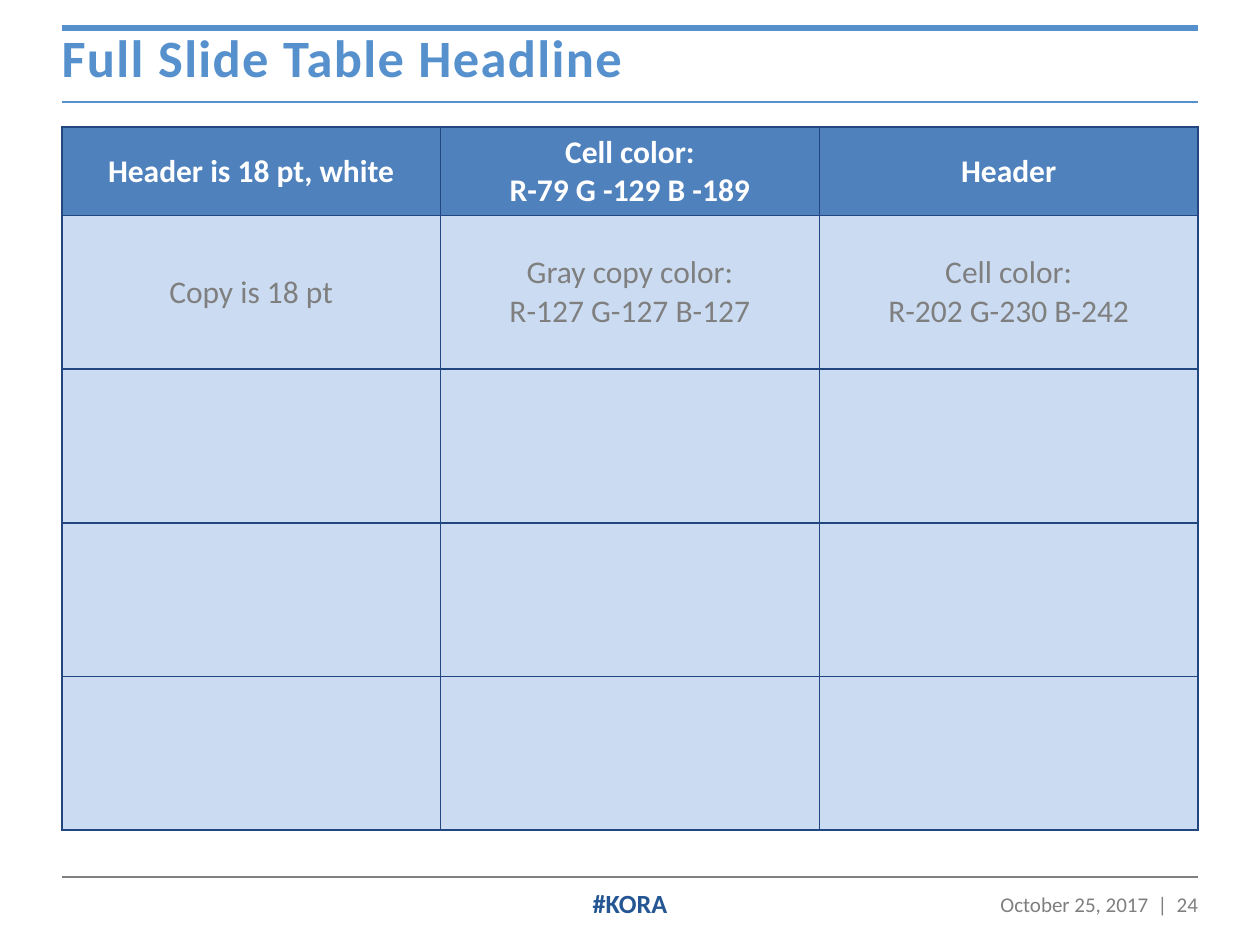
from dataclasses import dataclass

from lxml.etree import SubElement
from pptx import Presentation
from pptx.dml.color import RGBColor
from pptx.enum.shapes import MSO_CONNECTOR
from pptx.enum.text import MSO_ANCHOR, PP_ALIGN
from pptx.oxml import parse_xml
from pptx.oxml.ns import nsdecls, qn
from pptx.util import Pt


@dataclass(frozen=True)
class Theme:
    """Colours, type sizes and font of the slide."""
    font: str = "Calibri"
    accent: str = "5691CE"
    header_fill: str = "4F81BD"
    body_fill: str = "CBDCF2"
    border: str = "22467F"
    rule: str = "808080"
    copy: str = "7F7F7F"
    hashtag: str = "255694"
    white: str = "FFFFFF"
    title_size: float = 30
    table_size: float = 18
    hashtag_size: float = 15
    date_size: float = 12


THEME = Theme()
LEFT, WIDTH, INSET = 35.3, 649.4, 7.2
HEADER_HEIGHT = 49.7
ROWS = [
    ["Header is 18 pt, white", "Cell color:\nR-79 G -129 B -189", "Header"],
    ["Copy is 18 pt", "Gray copy color:\nR-127 G-127 B-127",
     "Cell color:\nR-202 G-230 B-242"],
    *[[""] * 3 for _ in range(3)],
]


def apply(target, formats):
    """Set each attribute of the target from a dict of format values."""
    for attribute, value in formats.items():
        setattr(target, attribute, value)


def write(frame, wording, size, color, bold=False, align=PP_ALIGN.LEFT, spacing=None):
    """Fill a text frame with one paragraph per line of wording."""
    frame.text = wording
    for paragraph in frame.paragraphs:
        apply(paragraph, {"alignment": align, "line_spacing": spacing})
        for run in paragraph.runs:
            apply(run.font, {"name": THEME.font, "size": Pt(size), "bold": bold})
            run.font.color.rgb = RGBColor.from_string(color)


def add_label(slide, box, wording, anchor=MSO_ANCHOR.TOP, **style):
    """Place a wrapped text box and return its text frame."""
    frame = slide.shapes.add_textbox(*map(Pt, box)).text_frame
    apply(frame, {"word_wrap": True, "vertical_anchor": anchor})
    write(frame, wording, **style)
    return frame


def add_rule(slide, left, top, width, color, weight):
    """Draw a horizontal rule without a shadow."""
    rule = slide.shapes.add_connector(
        MSO_CONNECTOR.STRAIGHT, Pt(left), Pt(top), Pt(left + width), Pt(top))
    rule.line.width = Pt(weight)
    rule.line.color.rgb = RGBColor.from_string(color)
    SubElement(rule._element.spPr, qn("a:effectLst"))


def add_headline(slide, left, top, width, height):
    """Place the headline between its thick and thin rules."""
    add_rule(slide, left, top, width, THEME.accent, 3.5)
    add_rule(slide, left, top + height, width, THEME.accent, 1)
    headline = add_label(
        slide, (left - INSET, top - 0.7, width + INSET, 38.2),
        "Full Slide Table Headline", size=THEME.title_size, color=THEME.accent,
        bold=True, spacing=0.9)
    headline.paragraphs[0].runs[0].font._element.set("spc", "80")


def add_borders(cell):
    """Give a cell a thin border on all four sides."""
    properties = cell._tc.get_or_add_tcPr()
    for position, side in enumerate("LRTB"):
        properties.insert(position, parse_xml(
            f'<a:ln{side} {nsdecls("a")} w="{Pt(1)}"><a:solidFill>'
            f'<a:srgbClr val="{THEME.border}"/></a:solidFill></a:ln{side}>'))


def add_color_table(slide, left, top, width, height):
    """Build the table with a short header row and equal body rows."""
    table = slide.shapes.add_table(
        len(ROWS), len(ROWS[0]), *map(Pt, (left, top, width, height))).table
    apply(table, {"first_row": False, "horz_banding": False})
    for column in table.columns:
        column.width = Pt(width / len(ROWS[0]))
    body_height = (height - HEADER_HEIGHT) / (len(ROWS) - 1)
    for row_index, wordings in enumerate(ROWS):
        is_header = row_index == 0
        table.rows[row_index].height = Pt(HEADER_HEIGHT if is_header else body_height)
        fill = THEME.header_fill if is_header else THEME.body_fill
        for column_index, wording in enumerate(wordings):
            cell = table.cell(row_index, column_index)
            cell.vertical_anchor = MSO_ANCHOR.MIDDLE
            cell.fill.solid()
            cell.fill.fore_color.rgb = RGBColor.from_string(fill)
            add_borders(cell)
            write(cell.text_frame, wording, THEME.table_size,
                  THEME.white if is_header else THEME.copy,
                  bold=is_header, align=PP_ALIGN.CENTER)


def add_footer(slide, left, top, width):
    """Place the footer rule, centred hashtag and right-aligned date."""
    add_rule(slide, left, top, width, THEME.rule, 1)
    date_width, hashtag_width = 136.8, 168
    add_label(slide, (left + width + INSET - date_width, top + 5, date_width, 27.4),
              "October 25, 2017  |  24", size=THEME.date_size, color=THEME.copy,
              align=PP_ALIGN.RIGHT)
    add_label(slide, (left + (width - hashtag_width) / 2, top + 0.5, hashtag_width, 28.8),
              "#KORA", anchor=MSO_ANCHOR.MIDDLE, size=THEME.hashtag_size,
              color=THEME.hashtag, bold=True, align=PP_ALIGN.CENTER)


def main():
    """Build the slide and save it."""
    deck = Presentation()
    apply(deck, {"slide_width": Pt(720), "slide_height": Pt(540)})
    slide = deck.slides.add_slide(deck.slide_layouts[6])
    add_headline(slide, LEFT, 15.8, WIDTH, 42.5)
    add_color_table(slide, LEFT, 72.7, WIDTH, 401)
    add_footer(slide, LEFT, 501.1, WIDTH)
    deck.save("out.pptx")


if __name__ == "__main__":
    main()
